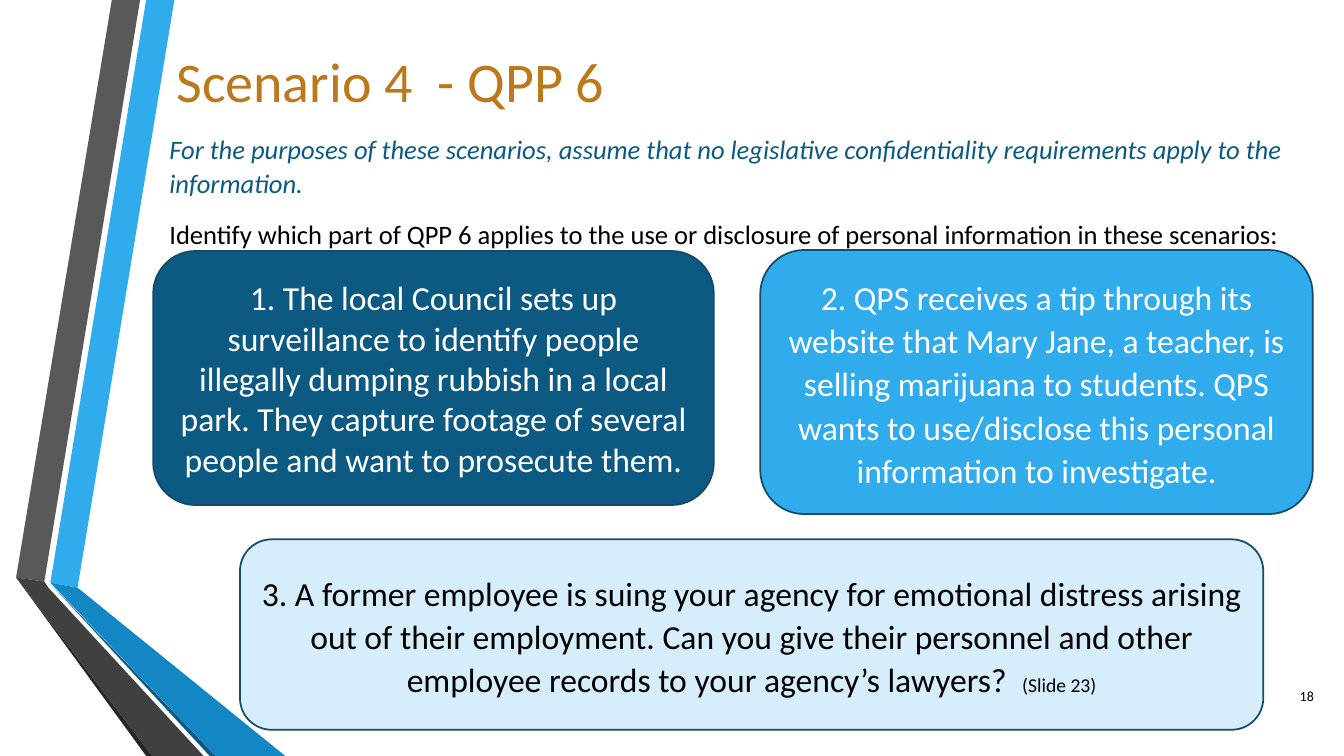
from dataclasses import dataclass

from lxml.etree import SubElement
from pptx import Presentation
from pptx.dml.color import RGBColor
from pptx.enum.shapes import MSO_SHAPE
from pptx.enum.text import MSO_ANCHOR, MSO_AUTO_SIZE, PP_ALIGN
from pptx.oxml.ns import qn
from pptx.util import Inches, Pt


@dataclass(frozen=True)
class Theme:
    font: str = "Calibri"
    gold: str = "BC791C"
    navy: str = "0C5A82"
    outline: str = "154B67"
    sky: str = "30ACEC"
    blue: str = "1287C3"
    pale: str = "D6EEFB"
    gray: str = "595959"
    charcoal: str = "404040"
    shadow_gray: str = "262626"
    white: str = "FFFFFF"
    black: str = "000000"
    title_size: int = 40
    scenario_size: int = 24
    intro_size: int = 19
    reference_size: int = 14
    number_size: int = 10


THEME = Theme()

# Ribbon pieces as (colour, corner points in inches from the slide's corner)
RIBBON = [
    (THEME.sky, [(0.5, 5.78), (0.77, 5.83), (1.73, 0), (1.45, 0)]),
    (THEME.gray, [(1.39, 0), (1.11, 0), (0.16, 5.73), (0.44, 5.77)]),
    (THEME.shadow_gray, [(0.16, 5.73), (1.45, 7.5), (1.51, 7.5)]),
    (THEME.navy, [(0.5, 5.79), (2.08, 7.5), (2.14, 7.5)]),
    (THEME.blue, [(0.5, 5.78), (2.14, 7.5), (2.83, 7.5), (0.77, 5.83)]),
    (THEME.charcoal, [(2.02, 7.5), (0.48, 5.83), (0.44, 5.77), (0.16, 5.73), (1.51, 7.5)]),
]

INTRO = [
    ("For the purposes of these scenarios, assume that no legislative confidentiality "
     "requirements apply to the information.", THEME.navy, True),
    ("Identify which part of QPP 6 applies to the use or disclosure of personal "
     "information in these scenarios:", THEME.black, False),
]

LOOSE = {"line_spacing": 1.07, "space_after": Pt(8)}

# Scenario cards as (box, fill, text colour, paragraph format, text, slide reference)
SCENARIOS = [
    ((1.52, 2.49, 5.56, 2.52), THEME.navy, THEME.white, {},
     "1. The local Council sets up surveillance to identify people illegally dumping "
     "rubbish in a local park. They capture footage of several people and want to "
     "prosecute them.", ""),
    ((7.54, 2.48, 5.48, 2.62), THEME.sky, THEME.white, LOOSE,
     "2. QPS receives a tip through its website that Mary Jane, a teacher, is selling "
     "marijuana to students. QPS wants to use/disclose this personal information to "
     "investigate.", ""),
    ((2.38, 5.35, 10.15, 1.89), THEME.pale, THEME.black, LOOSE,
     "3. A former employee is suing your agency for emotional distress arising out of "
     "their employment. Can you give their personnel and other employee records to "
     "your agency’s lawyers?  ", "(Slide 23)"),
]


def set_format(target, values):
    for name, value in values.items():
        setattr(target, name, value)


def add_text(paragraph, text, size, color, italic=False):
    run = paragraph.add_run()
    run.text = text
    set_format(run.font, {"name": THEME.font, "size": Pt(size), "italic": italic})
    run.font.color.rgb = RGBColor.from_string(color)


def place(shape, box):
    names = ("left", "top", "width", "height")
    set_format(shape, dict(zip(names, map(Inches, box))))


def prepare_frame(shape, anchor):
    frame = shape.text_frame
    set_format(frame, {"word_wrap": True, "auto_size": MSO_AUTO_SIZE.NONE,
                       "vertical_anchor": anchor})
    return frame


def fill_shape(shape, color):
    shape.shadow.inherit = False
    shape.fill.solid()
    shape.fill.fore_color.rgb = RGBColor.from_string(color)


def add_ribbon(slide, left, top):
    for color, points in RIBBON:
        corners = [(Inches(left + x), Inches(top + y)) for x, y in points]
        builder = slide.shapes.build_freeform(*corners[0])
        builder.add_line_segments(corners[1:], close=True)
        piece = builder.convert_to_shape()
        fill_shape(piece, color)
        piece.line.fill.background()


def add_title(slide, box):
    title = slide.shapes.title
    place(title, box)
    paragraph = prepare_frame(title, MSO_ANCHOR.MIDDLE).paragraphs[0]
    paragraph.alignment = PP_ALIGN.LEFT
    add_text(paragraph, "Scenario 4  - QPP 6", THEME.title_size, THEME.gold)


def add_intro(slide, box):
    body = slide.placeholders[1]
    place(body, box)
    frame = prepare_frame(body, MSO_ANCHOR.TOP)
    frame.margin_top = Inches(0.1)
    for index, (text, color, italic) in enumerate(INTRO):
        paragraph = frame.add_paragraph() if index else frame.paragraphs[0]
        set_format(paragraph, {**LOOSE, "space_before": Pt(4 if index else 0)})
        properties = paragraph._p.get_or_add_pPr()
        properties.set("marL", "0")
        properties.set("indent", "0")
        SubElement(properties, qn("a:buNone"))
        add_text(paragraph, text, THEME.intro_size, color, italic)


def add_scenario(slide, box, fill, color, spacing, text, reference):
    card = slide.shapes.add_shape(MSO_SHAPE.ROUNDED_RECTANGLE, *map(Inches, box))
    fill_shape(card, fill)
    card.line.color.rgb = RGBColor.from_string(THEME.outline)
    card.line.width = Pt(1.25)
    paragraph = prepare_frame(card, MSO_ANCHOR.MIDDLE).paragraphs[0]
    set_format(paragraph, {"alignment": PP_ALIGN.CENTER, **spacing})
    add_text(paragraph, text, THEME.scenario_size, color)
    if reference:
        add_text(paragraph, reference, THEME.reference_size, color)


def add_page_number(slide, box):
    number = slide.shapes.add_textbox(*map(Inches, box))
    paragraph = prepare_frame(number, MSO_ANCHOR.MIDDLE).paragraphs[0]
    paragraph.alignment = PP_ALIGN.RIGHT
    add_text(paragraph, "18", THEME.number_size, THEME.black)


def main():
    presentation = Presentation()
    set_format(presentation, {"slide_width": Inches(13.33), "slide_height": Inches(7.5)})
    slide = presentation.slides.add_slide(presentation.slide_layouts[1])
    add_ribbon(slide, 0, 0)
    add_title(slide, (1.65, 0.35, 10.96, 0.88))
    add_intro(slide, (1.58, 1.2, 11.45, 1.19))
    add_page_number(slide, (12.53, 6.7, 0.6, 0.4))
    for scenario in SCENARIOS:
        add_scenario(slide, *scenario)
    presentation.save("out.pptx")


if __name__ == "__main__":
    main()
